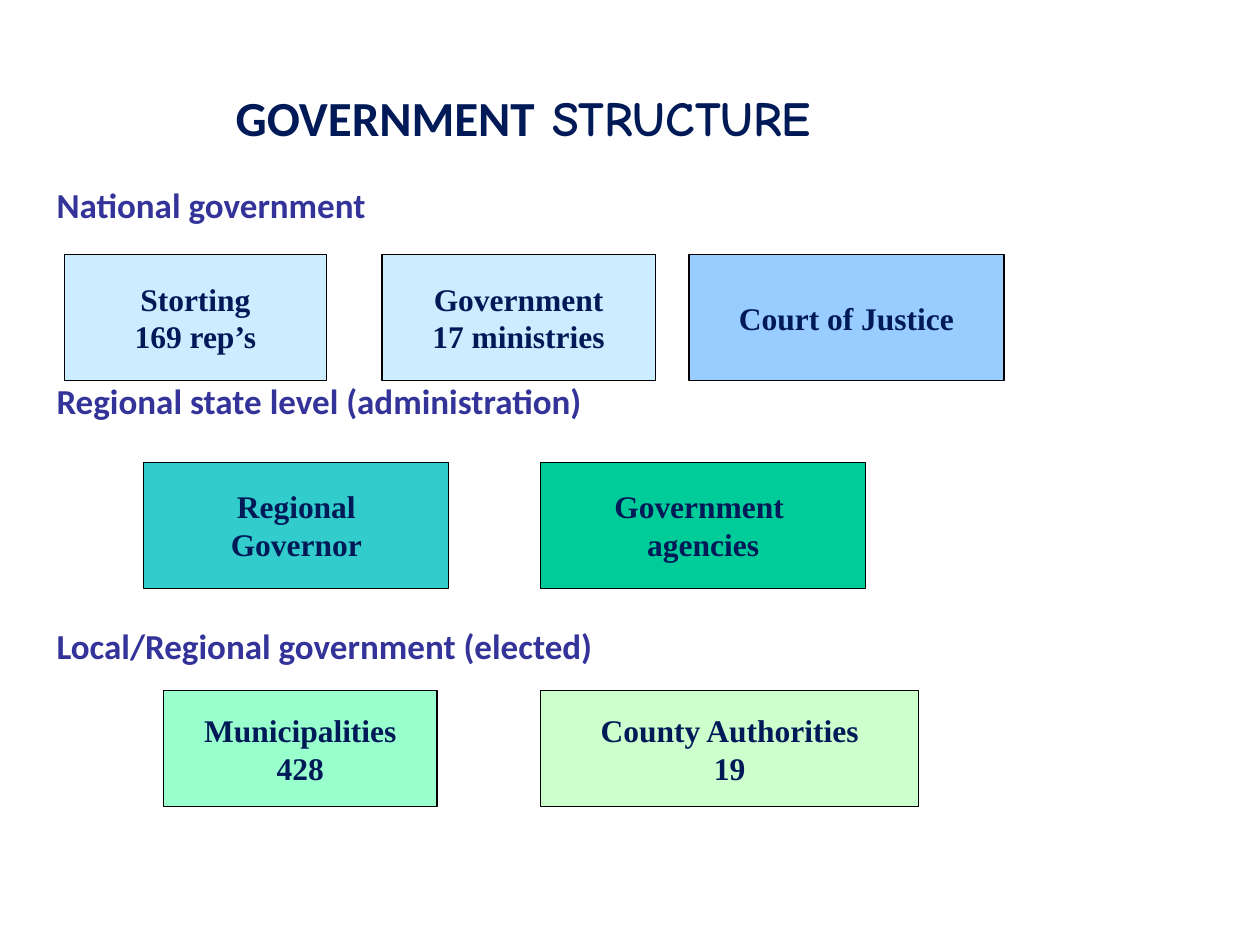
import pptx
import pptx.dml.color
import pptx.enum.shapes
import pptx.enum.text
import pptx.util
from pptx.util import Cm

NAVY = "001A58"
INDIGO = "333399"

LEVELS = [
    ("National government", 3.58, 5.13, 2.54, [
        (1.3, 5.28, "CCECFF", ["Storting", "169 rep’s"]),
        (7.7, 5.51, "CCECFF", ["Government", "17 ministries"]),
        (13.89, 6.35, "99CCFF", ["Court of Justice"]),
    ]),
    ("Regional state level (administration)", 7.53, 9.32, 2.54, [
        (2.9, 6.15, "33CCCC", ["Regional", "Governor"]),
        (10.9, 6.55, "00CC99", ["Government ", "agencies"]),
    ]),
    ("Local/Regional government (elected)", 12.47, 13.92, 2.34, [
        (3.3, 5.51, "99FFCC", ["Municipalities", "428"]),
        (10.9, 7.62, "CCFFCC", ["County Authorities", "19"]),
    ]),
]


def color(value):
    return pptx.dml.color.RGBColor.from_string(value)


def add_run(paragraph, text, font_name, size, font_color):
    run = paragraph.add_run()
    run.text = text
    run.font.name = font_name
    run.font.size = pptx.util.Pt(size)
    run.font.bold = True
    run.font.color.rgb = color(font_color)


def add_text_line(slide, left, top, width, height, runs, size, font_color):
    text_box = slide.shapes.add_textbox(Cm(left), Cm(top), Cm(width), Cm(height))
    frame = text_box.text_frame
    frame.word_wrap = True
    frame.margin_top = frame.margin_bottom = 0
    frame.vertical_anchor = pptx.enum.text.MSO_ANCHOR.MIDDLE
    for text, font_name in runs:
        add_run(frame.paragraphs[0], text, font_name, size, font_color)


def add_institution(slide, left, top, width, height, fill, lines):
    shape = slide.shapes.add_shape(
        pptx.enum.shapes.MSO_SHAPE.RECTANGLE,
        Cm(left), Cm(top), Cm(width), Cm(height))
    shape.shadow.inherit = False
    shape.fill.solid()
    shape.fill.fore_color.rgb = color(fill)
    shape.line.color.rgb = color("000000")
    shape.line.width = pptx.util.Pt(0.75)
    frame = shape.text_frame
    frame.word_wrap = False
    frame.vertical_anchor = pptx.enum.text.MSO_ANCHOR.MIDDLE
    for index, line in enumerate(lines):
        paragraph = frame.add_paragraph() if index else frame.paragraphs[0]
        paragraph.alignment = pptx.enum.text.PP_ALIGN.CENTER
        add_run(paragraph, line, "Times New Roman", 18, NAVY)


def main():
    presentation = pptx.Presentation()
    presentation.slide_width = Cm(25.4)
    presentation.slide_height = Cm(19.05)
    slide = presentation.slides.add_slide(presentation.slide_layouts[6])
    title_runs = [("GOVERNMENT", "Calibri"), (" STRUCTURE", "Comic Neue")]
    add_text_line(slide, 4.5, 1.61, 14, 1.5, title_runs, 28, NAVY)
    for heading, heading_top, top, height, institutions in LEVELS:
        add_text_line(slide, 0.89, heading_top, 21.6, 1.1,
                      [(heading, "Calibri")], 20, INDIGO)
        for left, width, fill, lines in institutions:
            add_institution(slide, left, top, width, height, fill, lines)
    presentation.save("out.pptx")


if __name__ == "__main__":
    main()
